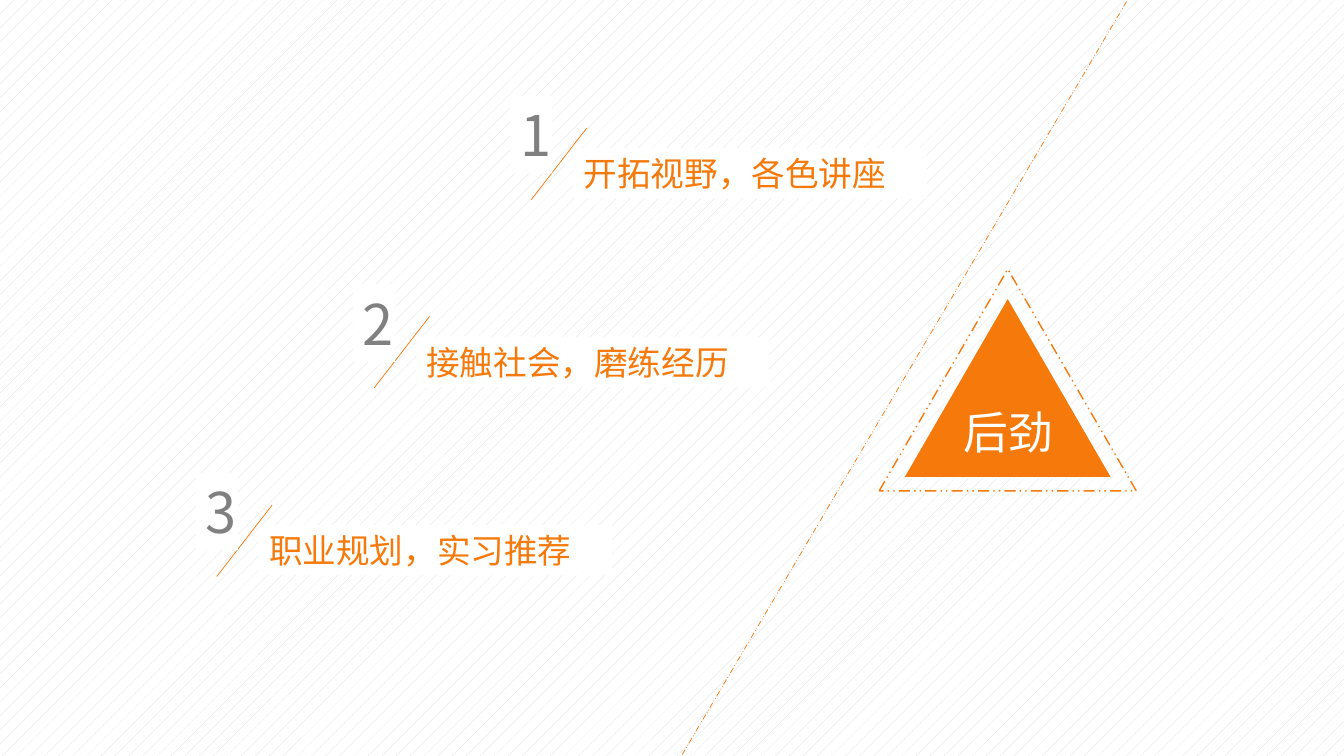
from lxml import etree
from pptx import Presentation
from pptx.dml.color import RGBColor
from pptx.enum.dml import MSO_LINE, MSO_PATTERN
from pptx.enum.shapes import MSO_CONNECTOR, MSO_SHAPE
from pptx.enum.text import MSO_ANCHOR, PP_ALIGN
from pptx.oxml.ns import qn
from pptx.util import Inches, Pt

TRIANGLE, RECTANGLE = MSO_SHAPE.ISOSCELES_TRIANGLE, MSO_SHAPE.RECTANGLE
STRAIGHT = MSO_CONNECTOR.STRAIGHT
DASHED = MSO_LINE.DASH_DOT_DOT
DOTTED = MSO_PATTERN.PERCENT_5
TOP = MSO_ANCHOR.TOP
LEFT, CENTER = PP_ALIGN.LEFT, PP_ALIGN.CENTER

ORANGE, GREY, PALE, WHITE = "F6790B", "808080", "D9D9D9", "FFFFFF"
FONT = "Noto Sans CJK SC"

THEME = "后劲"
BENEFITS = ["开拓视野，各色讲座", "接触社会，磨练经历", "职业规划，实习推荐"]

# Number box of the first benefit, and the step to the next one
FIRST_LEFT, FIRST_TOP = 5.06, 0.95
STEP_X, STEP_Y = -1.56, 1.87


def color(hex_code):
    return RGBColor.from_string(hex_code)


def write(shape, text, size, hex_code, align=LEFT):
    frame = shape.text_frame
    frame.word_wrap = True
    frame.vertical_anchor = TOP
    frame.text = text
    paragraph = frame.paragraphs[0]
    paragraph.alignment = align
    font = paragraph.runs[0].font
    font.size = Pt(size)
    font.color.rgb = color(hex_code)
    font.name = FONT
    # East Asian characters take their own typeface element
    run_properties = paragraph.runs[0]._r.get_or_add_rPr()
    etree.SubElement(run_properties, qn("a:ea"), typeface=FONT)


def add_box(shapes, kind, left, top, width, height, fill=None, line=None, dash=None):
    box = shapes.add_shape(kind, Inches(left), Inches(top), Inches(width), Inches(height))
    box.shadow.inherit = False
    if fill:
        box.fill.solid()
        box.fill.fore_color.rgb = color(fill)
    else:
        box.fill.background()
    if line:
        box.line.color.rgb = color(line)
        box.line.width = Pt(1)
        box.line.dash_style = dash
    else:
        box.line.fill.background()
    return box


def add_line(shapes, x1, y1, x2, y2, dash=None):
    line = shapes.add_connector(STRAIGHT, Inches(x1), Inches(y1), Inches(x2), Inches(y2))
    line.line.color.rgb = color(ORANGE)
    line.line.width = Pt(0.5)
    line.line.dash_style = dash
    etree.SubElement(line._element.spPr, qn("a:effectLst"))


def add_benefit(slide, index, benefit):
    left, top = FIRST_LEFT + index * STEP_X, FIRST_TOP + index * STEP_Y
    shapes = slide.shapes.add_group_shape().shapes
    label = add_box(shapes, RECTANGLE, left + 0.63, top + 0.52, 3.5, 0.5, WHITE)
    write(label, benefit, 24, ORANGE)
    add_line(shapes, left + 0.76, top + 0.32, left + 0.21, top + 1.03)
    number = add_box(shapes, RECTANGLE, left, top, 0.42, 0.77, WHITE)
    write(number, str(index + 1), 40, GREY)


def main():
    deck = Presentation()
    deck.slide_width, deck.slide_height = Inches(13.33), Inches(7.5)
    slide = deck.slides.add_slide(deck.slide_layouts[6])

    backdrop = slide.background.fill
    backdrop.patterned()
    backdrop.pattern = DOTTED
    backdrop.fore_color.rgb = color(PALE)
    backdrop.back_color.rgb = color(WHITE)

    emblem = slide.shapes.add_group_shape().shapes
    add_box(emblem, TRIANGLE, 8.96, 2.95, 2.07, 1.79, ORANGE, WHITE)
    add_box(emblem, TRIANGLE, 8.72, 2.67, 2.55, 2.2, line=ORANGE, dash=DASHED)
    theme = slide.shapes.add_textbox(Inches(9.19), Inches(3.97), Inches(1.62), Inches(0.64))
    write(theme, THEME, 32, WHITE, CENTER)

    add_line(slide.shapes, 6.15, 8.53, 11.3, -0.2, DASHED)

    for index, benefit in enumerate(BENEFITS):
        add_benefit(slide, index, benefit)

    deck.save("out.pptx")


if __name__ == "__main__":
    main()
